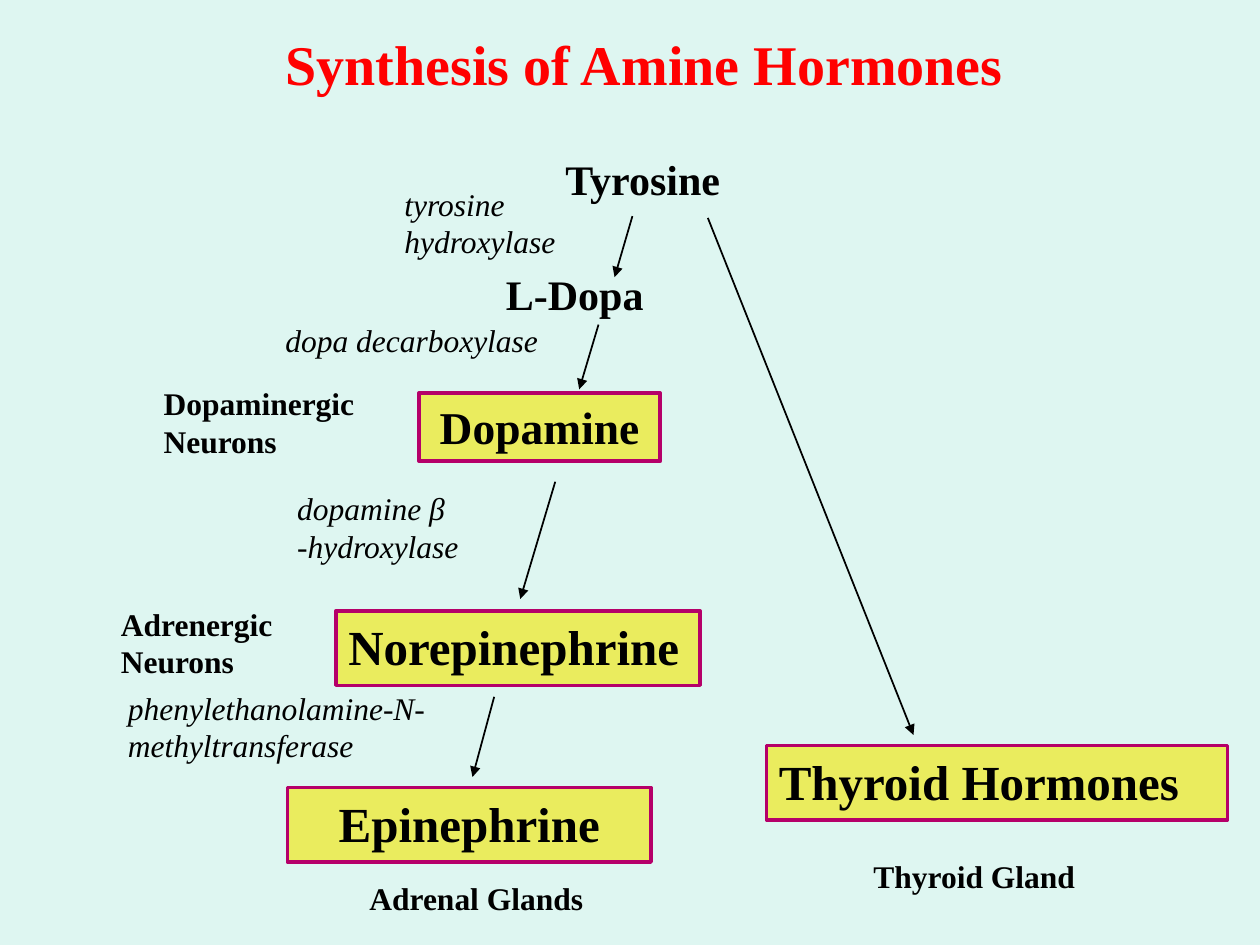
from dataclasses import dataclass

from lxml import etree
from pptx import Presentation
from pptx.dml.color import RGBColor
from pptx.enum.shapes import MSO_CONNECTOR as Connector, MSO_SHAPE as Shape
from pptx.enum.text import MSO_ANCHOR as Anchor, MSO_AUTO_SIZE as AutoSize, PP_ALIGN as Align
from pptx.oxml.ns import qn
from pptx.util import Pt


@dataclass(frozen=True)
class Theme:
    font: str = "Times New Roman"
    background: str = "DEF6F1"
    title: str = "FF0000"
    ink: str = "000000"
    box_fill: str = "EAEC5E"
    box_line: str = "B50069"
    title_size: int = 32
    hormone_size: int = 28
    dopamine_size: int = 26
    precursor_size: int = 24
    label_size: int = 18


class PathwaySlide:
    """Draws the parts of the pathway in one style; lengths are points."""

    def __init__(self, slide, theme):
        self.slide = slide
        self.theme = theme
        fill = slide.background.fill
        fill.solid()
        fill.fore_color.rgb = RGBColor.from_string(theme.background)

    def set_text(self, shape, text, size, color=None, bold=True, align=Align.LEFT,
                 anchor=Anchor.TOP, wrap=True, grow=True):
        frame = shape.text_frame
        frame.word_wrap = wrap
        frame.auto_size = AutoSize.SHAPE_TO_FIT_TEXT if grow else AutoSize.NONE
        frame.vertical_anchor = anchor
        paragraph = frame.paragraphs[0]
        paragraph.text = text
        paragraph.alignment = align
        font = paragraph.font
        font.name = self.theme.font
        font.size = Pt(size)
        font.bold = bold
        font.italic = not bold
        font.color.rgb = RGBColor.from_string(color or self.theme.ink)

    def label(self, text, left, top, width, height, size, **style):
        area = self.slide.shapes.add_textbox(Pt(left), Pt(top), Pt(width), Pt(height))
        self.set_text(area, text, size, **style)

    def title(self, text, left, top, width, height):
        self.label(text, left, top, width, height, self.theme.title_size,
                   color=self.theme.title, anchor=Anchor.MIDDLE, grow=False)

    def precursor(self, text, left, top, width):
        self.label(text, left, top, width, 36, self.theme.precursor_size)

    def enzyme(self, text, left, top, width, height):
        self.label(text, left, top, width, height, self.theme.label_size, bold=False)

    def site(self, text, left, top, width, height, wrap=True):
        self.label(text, left, top, width, height, self.theme.label_size, wrap=wrap)

    def hormone(self, text, left, top, width, height, size, align):
        box = self.slide.shapes.add_shape(
            Shape.RECTANGLE, Pt(left), Pt(top), Pt(width), Pt(height))
        box.shadow.inherit = False
        box.fill.solid()
        box.fill.fore_color.rgb = RGBColor.from_string(self.theme.box_fill)
        box.line.color.rgb = RGBColor.from_string(self.theme.box_line)
        box.line.width = Pt(2)
        self.set_text(box, text, size, align=align)

    def arrow(self, *ends):
        step = self.slide.shapes.add_connector(Connector.STRAIGHT, *map(Pt, ends))
        step.line.color.rgb = RGBColor.from_string(self.theme.ink)
        step.line.width = Pt(1)
        properties = step._element.spPr
        etree.SubElement(properties.find(qn("a:ln")), qn("a:tailEnd"), type="triangle")
        etree.SubElement(properties, qn("a:effectLst"))


def main():
    deck = Presentation()
    deck.slide_width, deck.slide_height = Pt(720), Pt(540)
    theme = Theme()
    pathway = PathwaySlide(deck.slides.add_slide(deck.slide_layouts[6]), theme)

    pathway.title("Synthesis of Amine Hormones", 156, 12, 468, 48)

    # Precursors
    pathway.precursor("Tyrosine", 316, 84, 114)
    pathway.precursor("L-Dopa", 282, 150, 144)

    # Hormones
    large = theme.hormone_size
    for hormone in (
        ("Dopamine", 239.5, 224.6, 137.8, 39, theme.dopamine_size, Align.CENTER),
        ("Norepinephrine", 192, 349, 208, 42.6, large, Align.LEFT),
        ("Epinephrine", 164.2, 450, 207.8, 42.6, large, Align.CENTER),
        ("Thyroid Hormones", 438, 426, 263.5, 42.6, large, Align.LEFT),
    ):
        pathway.hormone(*hormone)

    # Reaction steps
    for step in (
        (361.4, 123.5, 351.2, 158.4),
        (342, 185.5, 331, 222.5),
        (317.3, 275.3, 297.3, 342.3),
        (282.4, 398.2, 270, 444),
        (404.5, 124.5, 522, 420),
    ):
        pathway.arrow(*step)

    # Enzymes
    for enzyme in (
        ("tyrosine hydroxylase", 224, 102, 148, 50.4),
        ("dopa decarboxylase", 156, 180, 192, 29),
        ("dopamine β -hydroxylase", 162.7, 276, 173.5, 50.4),
        ("phenylethanolamine-N-methyltransferase", 66, 390, 192, 50.4),
    ):
        pathway.enzyme(*enzyme)

    # Sites of synthesis
    for site in (
        ("Dopaminergic Neurons", 86.4, 216, 154, 50.4),
        ("Adrenergic Neurons", 62, 342, 154, 50.4),
        ("Thyroid Gland", 492, 486, 154, 29),
        ("Adrenal Glands", 204, 499, 138, 29, False),
    ):
        pathway.site(*site)

    deck.save("out.pptx")


if __name__ == "__main__":
    main()
